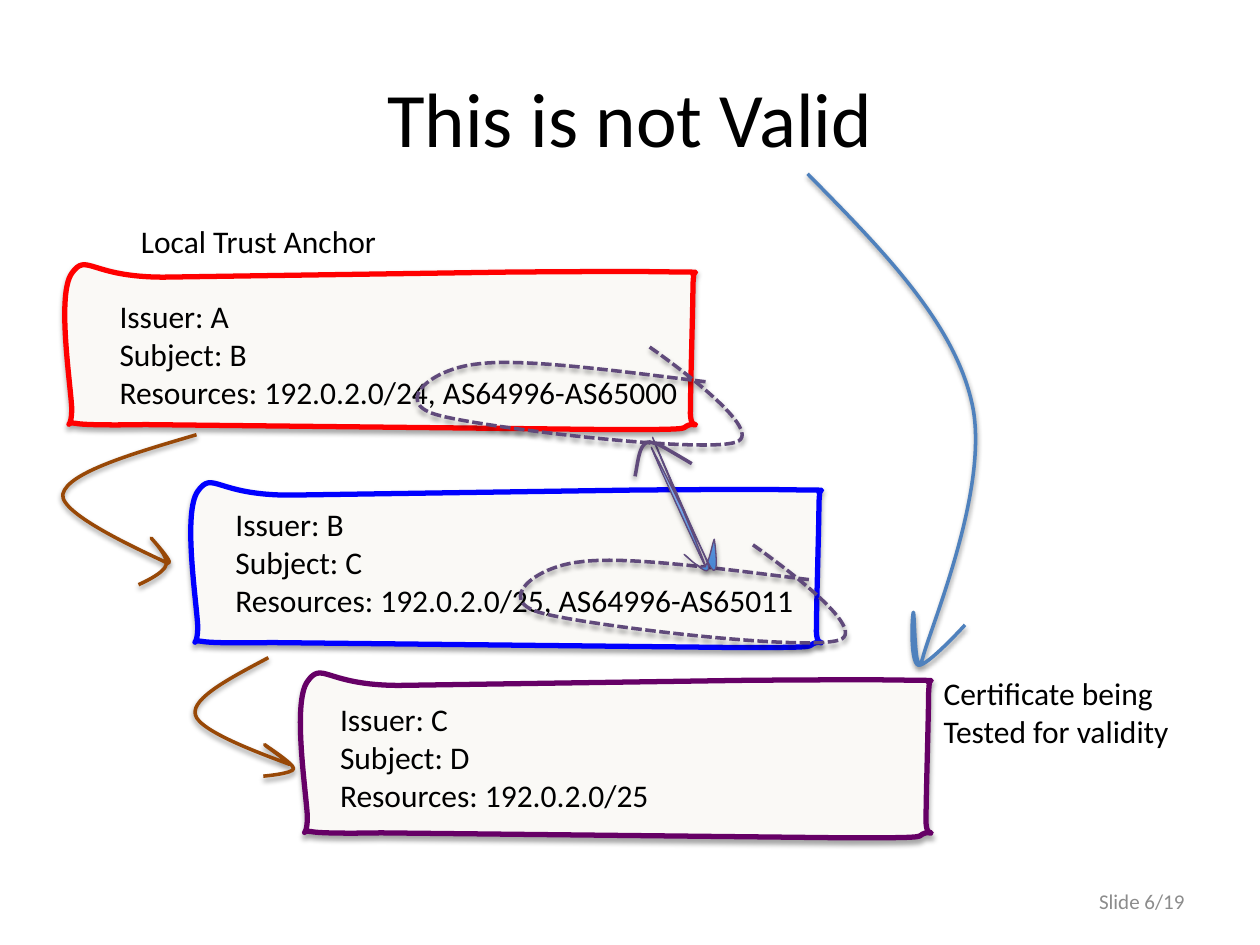
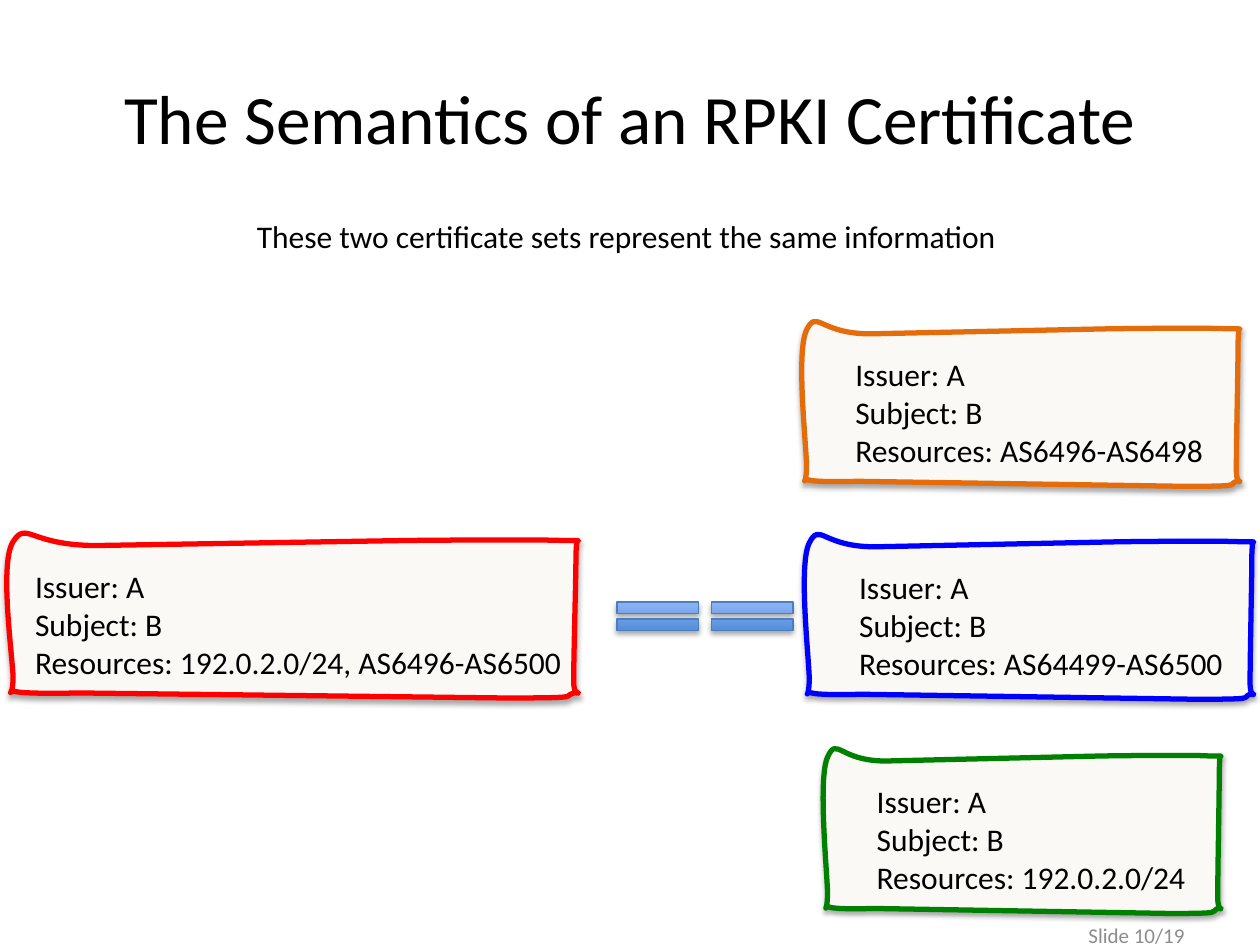
import dataclasses
import typing

import lxml.etree
import pptx
import pptx.dml.color
import pptx.enum.dml
import pptx.enum.shapes
import pptx.enum.text
import pptx.oxml.ns
import pptx.util

Inches = pptx.util.Inches
Pt = pptx.util.Pt
qn = pptx.oxml.ns.qn
Align = pptx.enum.text.PP_ALIGN
Point = tuple[float, float]
Outline = list[tuple[float, ...]]

FONT = "Calibri"
BLACK, GREY, PAPER = "000000", "8C8C8C", "FAF9F6"
RED, BLUE, PURPLE, ORANGE, GREEN = "FF0000", "0000FF", "660066", "E46C0A", "008000"
BROWN, STEEL, VIOLET, EQUAL_EDGE = "984807", "4F81BD", "604A7B", "4B7EBC"
GRADIENT = ("3F80CE", "A4C4FF")
CARD_WIDTH = 5.01
SLIDE_COUNT = 19

CARD_OUTLINE: Outline = [
    (0.06, 0.07),
    (-0.06, 0.24, 0.05, 0.94, 0.06, 1.14),
    (0.06, 1.34, -0.01, 1.24, 0.09, 1.26),
    (0.18, 1.28, 0.64, 1.27, 0.64, 1.27),
    (4.36, 1.31),
    (5.08, 1.31, 4.86, 1.3, 4.97, 1.27),
    (5.07, 1.25, 4.96, 1.34, 4.97, 1.15),
    (4.97, 0.97, 4.99, 0.34, 4.99, 0.16),
    (5, -0.02, 5.01, 0.1, 4.99, 0.08),
    (4.97, 0.06, 5.11, 0.06, 4.86, 0.06),
    (4.62, 0.05, 3.52, 0.06, 3.52, 0.06),
    (0.79, 0.1),
    (0.2, 0.1, 0.18, -0.1, 0.06, 0.07),
]
ISSUE_ARROW_A_TO_B: Outline = [
    (1.56, 3.45),
    (1.05, 3.6, 0.54, 3.75, 0.5, 3.92),
    (0.46, 4.08, 1.19, 4.4, 1.31, 4.46),
    (1.43, 4.52, 1.2, 4.27, 1.2, 4.27),
    (1.21, 4.28, 1.34, 4.42, 1.32, 4.48),
    (1.31, 4.55, 1.1, 4.64, 1.1, 4.64),
]
ISSUE_ARROW_B_TO_C: Outline = [
    (2.13, 5.22),
    (1.83, 5.38, 1.52, 5.54, 1.55, 5.67),
    (1.57, 5.81, 2.18, 6.02, 2.28, 6.06),
    (2.37, 6.1, 2.09, 5.91, 2.1, 5.91),
    (2.11, 5.92, 2.33, 6.06, 2.33, 6.1),
    (2.33, 6.14, 2.09, 6.16, 2.09, 6.16),
]
VERDICT_ARROW: Outline = [
    (6.41, 1.38),
    (6.98, 1.96, 7.56, 2.54, 7.71, 3.18),
    (7.87, 3.82, 7.41, 4.92, 7.33, 5.2),
    (7.26, 5.48, 7.26, 4.85, 7.25, 4.86),
    (7.24, 4.87, 7.22, 5.26, 7.29, 5.28),
    (7.36, 5.29, 7.66, 4.96, 7.66, 4.96),
]
RESOURCE_LOOP: Outline = [
    (5.6, 3.03),
    (4.87, 2.94, 4.13, 2.84, 3.78, 2.89),
    (3.42, 2.93, 3.12, 3.19, 3.46, 3.29),
    (3.8, 3.39, 5.55, 3.6, 5.84, 3.51),
    (6.12, 3.42, 5.15, 2.75, 5.15, 2.75),
]
MISMATCH_ARROW: Outline = [
    (5.17, 3.55),
    (5.16, 3.55, 5.6, 4.51, 5.6, 4.5),
    (5.61, 4.48, 5.17, 3.47, 5.18, 3.47),
    (5.18, 3.47, 5.56, 4.36, 5.64, 4.5),
    (5.72, 4.63, 5.67, 4.28, 5.67, 4.28),
    (5.66, 4.28, 5.63, 4.48, 5.59, 4.5),
    (5.55, 4.52, 5.43, 4.4, 5.43, 4.4),
    (5.44, 4.4, 5.66, 4.63, 5.62, 4.48),
    (5.57, 4.34, 5.17, 3.54, 5.17, 3.55),
]
MISMATCH_HEAD: Outline = [
    (5.04, 3.78),
    (5.06, 3.68, 5.07, 3.57, 5.11, 3.53),
    (5.14, 3.49, 5.16, 3.51, 5.23, 3.53),
    (5.29, 3.56, 5.49, 3.68, 5.49, 3.68),
]


@dataclasses.dataclass
class Label:
    left: float
    top: float
    width: float
    lines: list[str]
    height: float = 0.4


@dataclasses.dataclass
class Card:
    left: float
    top: float
    width: float
    edge: str
    text_left: float
    text_top: float
    text_width: float
    issuer: str
    subject: str
    resources: str


@dataclasses.dataclass
class Sketch:
    outline: Outline
    edge: str
    weight: float = 2
    offset: Point = (0, 0)
    stretch: float = 1
    fill: str | tuple[str, str] | None = None
    dashed: bool = False


STAIRCASE = [
    Card(2.38, 5.34, 5.01, PURPLE, 2.6, 5.51, 2.69, "C", "D", "192.0.2.0/25"),
    Card(1.51, 3.83, 5.01, BLUE, 1.77, 3.96, 4.69, "B", "C", "192.0.2.0/25, AS64996-AS65011"),
    Card(0.51, 2.1, 5.01, RED, 0.85, 2.31, 4.69, "A", "B", "192.0.2.0/24, AS64996-AS65000"),
]
EQUIVALENT_SETS = [
    Card(6.36, 2.55, 3.48, ORANGE, 6.69, 2.77, 3, "A", "B", "AS6496-AS6498"),
    Card(6.38, 4.24, 3.57, BLUE, 6.72, 4.46, 3.13, "A", "B", "AS64499-AS6500"),
    Card(6.53, 5.94, 3.16, GREEN, 6.86, 6.16, 2.69, "A", "B", "192.0.2.0/24"),
    Card(0.05, 4.23, 4.54, RED, 0.18, 4.45, 4.56, "A", "B", "192.0.2.0/24, AS6496-AS6500"),
]
ANNOTATIONS = [
    Sketch(ISSUE_ARROW_A_TO_B, BROWN),
    Sketch(ISSUE_ARROW_B_TO_C, BROWN),
    Sketch(VERDICT_ARROW, STEEL),
    Sketch(RESOURCE_LOOP, VIOLET, dashed=True),
    Sketch(RESOURCE_LOOP, VIOLET, offset=(0.82, 1.57), dashed=True),
    Sketch(MISMATCH_ARROW, VIOLET, weight=0.75, fill=GRADIENT),
    Sketch(MISMATCH_HEAD, VIOLET),
]


def rgb(code: str) -> pptx.dml.color.RGBColor:
    return pptx.dml.color.RGBColor.from_string(code)


def apply(target: typing.Any, values: dict[str, typing.Any]) -> None:
    for name, value in values.items():
        setattr(target, name, value)


def add_shadow(shape: typing.Any, opacity: int) -> None:
    shape.shadow.inherit = False
    effects = shape.element.spPr.find(qn("a:effectLst"))
    shadow = lxml.etree.SubElement(
        effects, qn("a:outerShdw"), blurRad=str(Pt(3.1)), dist=str(Pt(1.8)),
        dir="5400000", rotWithShape="0")
    tint = lxml.etree.SubElement(shadow, qn("a:srgbClr"), val=BLACK)
    lxml.etree.SubElement(tint, qn("a:alpha"), val=str(opacity * 1000))


def style_shape(shape: typing.Any, fill: str | tuple[str, str] | None,
                edge: str, weight: float) -> None:
    if fill is None:
        shape.fill.background()
    elif isinstance(fill, str):
        shape.fill.solid()
        shape.fill.fore_color.rgb = rgb(fill)
    else:
        shape.fill.gradient()
        shape.fill.gradient_angle = 90
        for stop, code in zip(shape.fill.gradient_stops, fill):
            stop.color.rgb = rgb(code)
    shape.line.color.rgb = rgb(edge)
    shape.line.width = Pt(weight)
    add_shadow(shape, 35 if fill else 38)


def bend_segments(shape: typing.Any, outline: Outline) -> None:
    """Merge each run of three straight steps into one cubic curve."""
    steps = iter(list(shape.element.iter(qn("a:lnTo"))))
    for segment in outline[1:]:
        first = next(steps)
        if len(segment) == 2:
            continue
        first.tag = qn("a:cubicBezTo")
        for step in (next(steps), next(steps)):
            first.append(step[0])
            step.getparent().remove(step)


def draw_sketch(page: typing.Any, sketch: Sketch) -> None:
    dx, dy = sketch.offset
    points = [(Inches(dx + x * sketch.stretch), Inches(dy + y))
              for segment in sketch.outline for x, y in zip(segment[::2], segment[1::2])]
    builder = page.shapes.build_freeform(*points[0])
    builder.add_line_segments(points[1:], close=sketch.fill is not None)
    shape = builder.convert_to_shape()
    bend_segments(shape, sketch.outline)
    style_shape(shape, sketch.fill, sketch.edge, sketch.weight)
    if sketch.dashed:
        shape.line.dash_style = pptx.enum.dml.MSO_LINE.SQUARE_DOT


def write_lines(frame: typing.Any, lines: list[str], size: float, color: str,
                align: typing.Any) -> None:
    for index, line in enumerate(lines):
        para = frame.paragraphs[0] if index == 0 else frame.add_paragraph()
        para.alignment = align
        span = para.add_run()
        span.text = line
        apply(span.font, {"name": FONT, "size": Pt(size)})
        span.font.color.rgb = rgb(color)


def draw_label(page: typing.Any, label: Label) -> None:
    box = page.shapes.add_textbox(Inches(label.left), Inches(label.top),
                                  Inches(label.width), Inches(label.height))
    apply(box.text_frame, {"word_wrap": False,
                           "auto_size": pptx.enum.text.MSO_AUTO_SIZE.SHAPE_TO_FIT_TEXT})
    write_lines(box.text_frame, label.lines, 18, BLACK, Align.LEFT)


def draw_card(page: typing.Any, card: Card) -> None:
    draw_sketch(page, Sketch(CARD_OUTLINE, card.edge, 3, (card.left, card.top),
                             card.width / CARD_WIDTH, PAPER))
    draw_label(page, Label(card.text_left, card.text_top, card.text_width,
                           [f"Issuer: {card.issuer}", f"Subject: {card.subject}",
                            f"Resources: {card.resources}"], 1.01))


def draw_equal_sign(page: typing.Any, left: float) -> None:
    sign = page.shapes.add_shape(pptx.enum.shapes.MSO_SHAPE.MATH_EQUAL, Inches(left),
                                 Inches(4.7), Inches(0.88), Inches(0.38))
    style_shape(sign, GRADIENT, EQUAL_EDGE, 0.75)


def add_page(deck: typing.Any, title: str, title_size: float, number: int,
             number_top: float) -> typing.Any:
    page = deck.slides.add_slide(deck.slide_layouts[5])
    heading = page.shapes.title
    apply(heading, {"left": Inches(0.5), "top": Inches(0.3),
                    "width": Inches(9), "height": Inches(1.25)})
    apply(heading.text_frame, {"word_wrap": True,
                               "auto_size": pptx.enum.text.MSO_AUTO_SIZE.NONE,
                               "vertical_anchor": pptx.enum.text.MSO_ANCHOR.MIDDLE})
    write_lines(heading.text_frame, [title], title_size, BLACK, Align.CENTER)
    footer = page.shapes.add_textbox(Inches(7.17), Inches(number_top), Inches(2.33), Inches(0.4))
    apply(footer.text_frame, {"word_wrap": True,
                              "vertical_anchor": pptx.enum.text.MSO_ANCHOR.MIDDLE})
    write_lines(footer.text_frame, [f"Slide {number}/{SLIDE_COUNT}"], 12, GREY, Align.RIGHT)
    return page


def build_invalid_chain(deck: typing.Any) -> None:
    page = add_page(deck, "This is not Valid", 44, 6, 6.95)
    for card in STAIRCASE:
        draw_card(page, card)
    draw_label(page, Label(1.02, 1.71, 2.11, ["Local Trust Anchor"]))
    draw_label(page, Label(7.39, 5.3, 2.04, ["Certificate being", "Tested for validity"], 0.71))
    for sketch in ANNOTATIONS:
        draw_sketch(page, sketch)


def build_semantics(deck: typing.Any) -> None:
    page = add_page(deck, "The Semantics of an RPKI Certificate", 39.6, 10, 7.22)
    for card in EQUIVALENT_SETS:
        draw_card(page, card)
    draw_label(page, Label(1.94, 1.67, 6.1,
                           ["These two certificate sets represent the same information"]))
    for left in (4.78, 5.53):
        draw_equal_sign(page, left)


def main() -> None:
    deck = pptx.Presentation()
    apply(deck, {"slide_width": Inches(10), "slide_height": Inches(7.5)})
    build_invalid_chain(deck)
    build_semantics(deck)
    deck.save("out.pptx")


if __name__ == "__main__":
    main()
